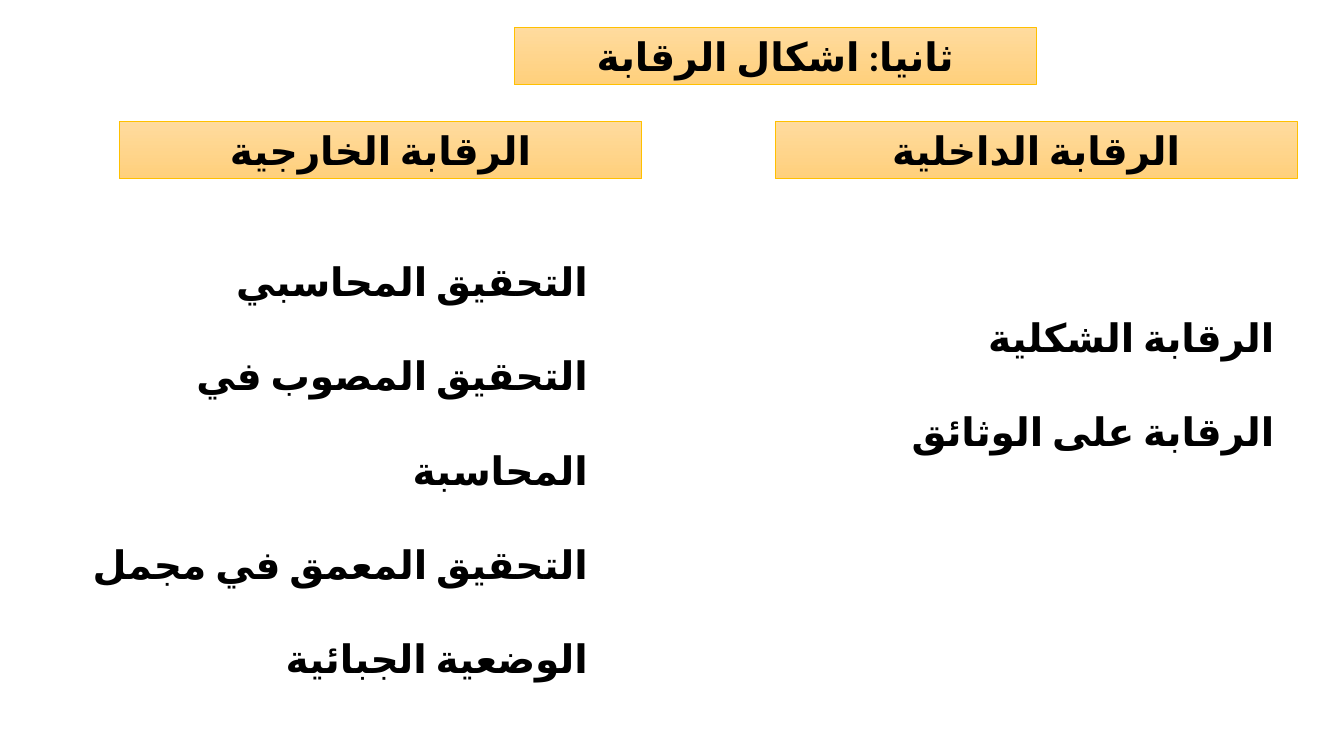
"""Build a slide on the forms of control: a title, two headings and their lists."""
from dataclasses import dataclass

from lxml import etree
from pptx import Presentation, util as u
from pptx.dml.color import RGBColor
from pptx.enum import lang, shapes, text
from pptx.oxml.ns import qn
from pptx.slide import Slide
from pptx.text.text import TextFrame

BLACK = RGBColor(0x00, 0x00, 0x00)
GOLD = RGBColor(0xFF, 0xC0, 0x00)
LIGHT_ORANGE = RGBColor(0xFF, 0xDB, 0x9E)
DEEP_ORANGE = RGBColor(0xFF, 0xD0, 0x7C)

FONT = "Calibri"
BANNER_WIDTH, BANNER_HEIGHT = 373, 41.2
LIST_WIDTH = 405.4
HEADING_TOP = 86.4


@dataclass(frozen=True)
class Banner:
    left: float
    top: float
    label: str


@dataclass(frozen=True)
class ControlList:
    left: float
    top: float
    height: float
    items: tuple[str, ...]


BANNERS = (
    Banner(367.2, 19.4, "ثانيا: اشكال الرقابة"),
    Banner(553.7, HEADING_TOP, "الرقابة الداخلية"),
    Banner(85.3, HEADING_TOP, "الرقابة الخارجية"),
)
CONTROL_LISTS = (
    ControlList(21.6, 146.9, 211, (
        "التحقيق المحاسبي",
        "التحقيق المصوب في المحاسبة",
        "التحقيق المعمق في مجمل الوضعية الجبائية",
    )),
    ControlList(511.9, 186.5, 132.5, ("الرقابة الشكلية", "الرقابة على الوثائق")),
)


def write_text(frame: TextFrame, *lines: str, alignment: text.PP_ALIGN,
               spacing: float = 1, size: float = 28, bold: bool = True,
               color: RGBColor = BLACK) -> None:
    frame.word_wrap = True
    frame.auto_size = text.MSO_AUTO_SIZE.SHAPE_TO_FIT_TEXT
    for index, line in enumerate(lines):
        paragraph = frame.add_paragraph() if index else frame.paragraphs[0]
        paragraph.alignment = alignment
        paragraph.line_spacing = spacing
        paragraph._p.get_or_add_pPr().set("rtl", "1")
        run = paragraph.add_run()
        run.text = line
        run.font.name = FONT
        run.font.size = u.Pt(size)
        run.font.bold = bold
        run.font.color.rgb = color
        run.font.language_id = lang.MSO_LANGUAGE_ID.ARABIC_ALGERIA
        etree.SubElement(run._r.get_or_add_rPr(), qn("a:cs"), typeface=FONT)


def draw_banner(slide: Slide, banner: Banner) -> None:
    shape = slide.shapes.add_shape(
        shapes.MSO_SHAPE.RECTANGLE, u.Pt(banner.left), u.Pt(banner.top),
        u.Pt(BANNER_WIDTH), u.Pt(BANNER_HEIGHT))
    shape.shadow.inherit = False
    shape.fill.gradient()
    shape.fill.gradient_angle = 270
    for stop, color, position in zip(
            shape.fill.gradient_stops, (LIGHT_ORANGE, DEEP_ORANGE), (0, 1)):
        stop.color.rgb = color
        stop.position = position
    shape.line.color.rgb = GOLD
    shape.line.width = u.Pt(0.5)
    write_text(shape.text_frame, banner.label, alignment=text.PP_ALIGN.CENTER)


def draw_control_list(slide: Slide, control_list: ControlList) -> None:
    box = slide.shapes.add_textbox(
        u.Pt(control_list.left), u.Pt(control_list.top),
        u.Pt(LIST_WIDTH), u.Pt(control_list.height))
    write_text(box.text_frame, *control_list.items,
               alignment=text.PP_ALIGN.RIGHT, spacing=2)


def main() -> None:
    presentation = Presentation()
    presentation.slide_width, presentation.slide_height = u.Pt(960), u.Pt(540)
    slide = presentation.slides.add_slide(presentation.slide_layouts[6])
    for banner in BANNERS:
        draw_banner(slide, banner)
    for control_list in CONTROL_LISTS:
        draw_control_list(slide, control_list)
    presentation.save("out.pptx")


if __name__ == "__main__":
    main()
